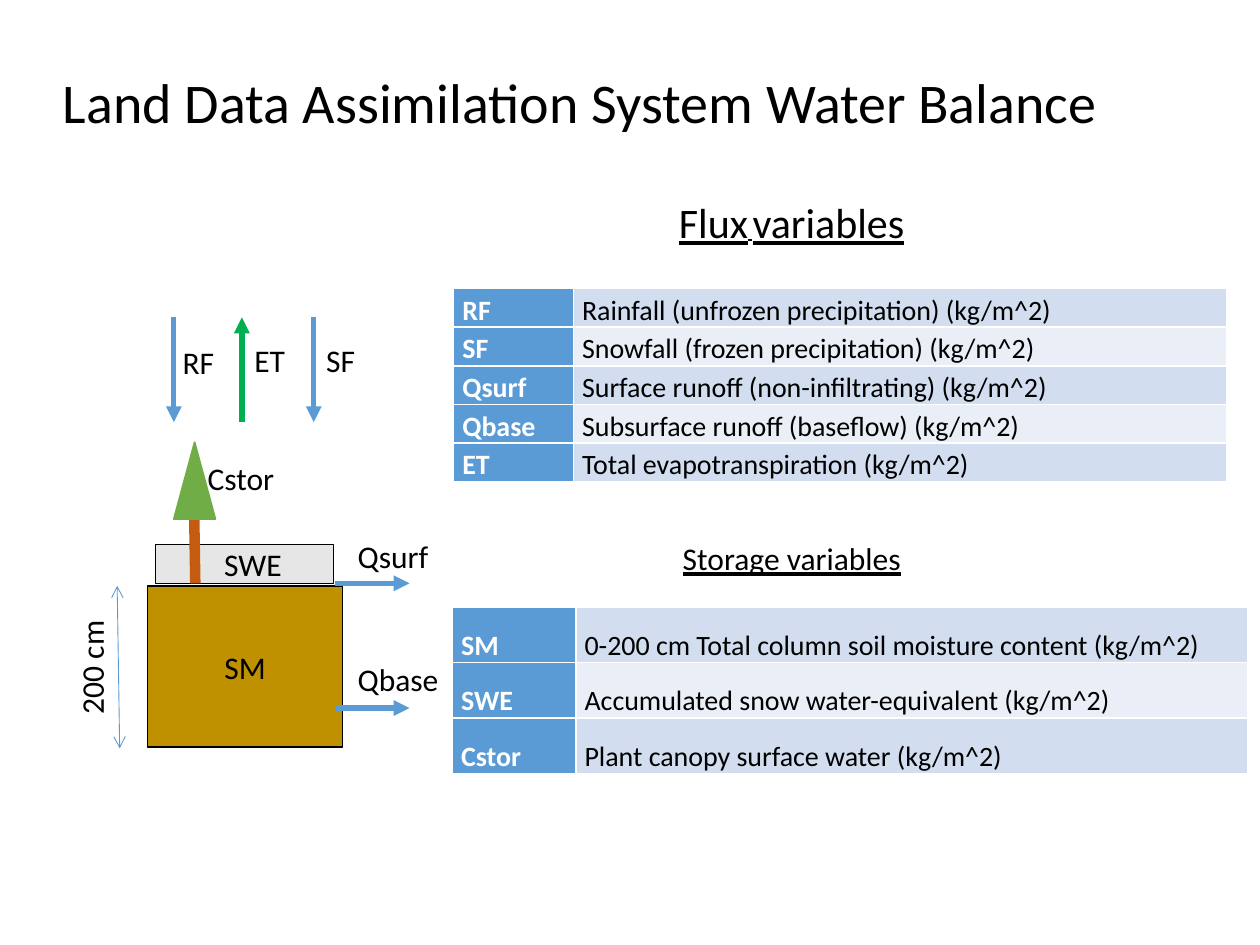
"""Build the Land Data Assimilation System water balance slide."""
from dataclasses import dataclass

from lxml import etree
from pptx import Presentation
from pptx import util as u
from pptx.dml.color import RGBColor
from pptx.enum import shapes, text
from pptx.oxml import ns


@dataclass(frozen=True)
class Theme:
    font: str = "Calibri"
    ink: str = "000000"
    white: str = "FFFFFF"
    blue: str = "5B9BD5"
    green: str = "00B050"
    soil: str = "BF9000"
    snow: str = "E7E6E6"
    trunk: str = "C55A11"
    leaf: str = "70AD47"
    bands: tuple = ("D2DEEF", "EAEFF7")
    title: int = 32
    heading: int = 24
    label: int = 18
    cell: int = 16
    gap: int = 11


class SlideBuilder:
    def __init__(self, slide, theme):
        self.slide, self.theme = slide, theme

    def style(self, run, size, color=None, bold=False, underline=False):
        run.font.name, run.font.size = self.theme.font, u.Pt(size)
        run.font.bold, run.font.underline = bold, underline
        run.font.color.rgb = RGBColor.from_string(color or self.theme.ink)

    def block(self, kind, box, fill, outline, weight, caption=""):
        block = self.slide.shapes.add_shape(kind, *map(u.Inches, box))
        block.shadow.inherit = False
        block.fill.solid()
        block.fill.fore_color.rgb = RGBColor.from_string(fill)
        block.line.color.rgb = RGBColor.from_string(outline)
        block.line.width = u.Pt(weight)
        if caption:
            frame = block.text_frame
            frame.text = caption
            frame.vertical_anchor = text.MSO_ANCHOR.MIDDLE
            frame.paragraphs[0].alignment = text.PP_ALIGN.CENTER
            self.style(frame.paragraphs[0].runs[0], self.theme.label)

    def label(self, parts, box, underline=False, rotation=0):
        holder = self.slide.shapes.add_textbox(*map(u.Inches, box))
        holder.rotation = rotation
        frame = holder.text_frame
        frame.word_wrap = False
        frame.auto_size = text.MSO_AUTO_SIZE.SHAPE_TO_FIT_TEXT
        for wording, size in parts:
            run = frame.paragraphs[0].add_run()
            run.text = wording
            self.style(run, size, underline=underline)

    def arrow(self, start, end, color, weight, **ends):
        points = map(u.Inches, (*start, *end))
        arrow = self.slide.shapes.add_connector(shapes.MSO_CONNECTOR.STRAIGHT, *points)
        arrow.line.color.rgb = RGBColor.from_string(color)
        arrow.line.width = u.Pt(weight)
        properties = arrow._element.spPr
        for end_name in ("head", "tail"):
            if end_name in ends:
                outline = properties.find(ns.qn("a:ln"))
                etree.SubElement(outline, ns.qn(f"a:{end_name}End"), type=ends[end_name])
        etree.SubElement(properties, ns.qn("a:effectLst"))

    def border(self, cell):
        properties = cell._tc.get_or_add_tcPr()
        for place, side in enumerate("LRTB"):
            edge = etree.Element(ns.qn(f"a:ln{side}"), w=str(u.Pt(1)))
            fill = etree.SubElement(edge, ns.qn("a:solidFill"))
            etree.SubElement(fill, ns.qn("a:srgbClr"), val=self.theme.white)
            properties.insert(place, edge)

    def cell(self, cell, wording, fill, color, bold):
        cell.text = wording
        cell.fill.solid()
        cell.fill.fore_color.rgb = RGBColor.from_string(fill)
        cell.vertical_anchor = text.MSO_ANCHOR.BOTTOM
        cell.margin_left = cell.margin_right = u.Inches(0.07)
        cell.margin_top = cell.margin_bottom = 0
        paragraph = cell.text_frame.paragraphs[0]
        paragraph.line_spacing = 1.15
        self.style(paragraph.runs[0], self.theme.cell, color, bold)
        self.border(cell)

    def table(self, left, top, widths, row_height, rows):
        size = (sum(widths), row_height * len(rows))
        table = self.slide.shapes.add_table(
            len(rows), 2, *map(u.Inches, (left, top, *size))).table
        table.first_row = table.horz_banding = False
        for column, width in zip(table.columns, widths):
            column.width = u.Inches(width)
        for index, (name, meaning) in enumerate(rows):
            table.rows[index].height = u.Inches(row_height)
            band = self.theme.bands[index % 2]
            self.cell(table.cell(index, 0), name, self.theme.blue, self.theme.white, True)
            self.cell(table.cell(index, 1), meaning, band, self.theme.ink, False)


def draw_diagram(page):
    theme, kinds = page.theme, shapes.MSO_SHAPE
    page.block(kinds.RECTANGLE, (1.17, 4.65, 1.55, 1.28), theme.soil, theme.ink, 0.75, "SM")
    page.block(kinds.RECTANGLE, (1.23, 4.32, 1.42, 0.31), theme.snow, theme.ink, 0.5)
    page.arrow((1.54, 3.99), (1.55, 4.63), theme.trunk, 6)
    page.block(kinds.ISOSCELES_TRIANGLE, (1.38, 3.51, 0.33, 0.61), theme.leaf, theme.leaf, 1)
    for x in (1.38, 2.49):
        page.arrow((x, 2.52), (x, 3.35), theme.blue, 3, tail="triangle")
    page.arrow((1.92, 2.52), (1.92, 3.35), theme.green, 3, head="triangle")
    for y in (4.63, 5.62):
        page.arrow((2.66, y), (3.25, y), theme.blue, 3, tail="triangle")
    page.arrow((0.93, 4.65), (0.95, 5.94), theme.blue, 0.5, head="arrow", tail="arrow")
    for name, left, top, width in (
        ("Cstor", 1.55, 3.59, 0.73),
        ("SWE", 1.68, 4.28, 0.66),
        ("RF", 1.35, 2.67, 0.45),
        ("ET", 1.92, 2.66, 0.45),
        ("SF", 2.49, 2.66, 0.43),
        ("Qsurf", 2.74, 4.21, 0.77),
        ("Qbase", 2.74, 5.19, 0.85),
    ):
        page.label([(name, theme.label)], (left, top, width, 0.4))
    page.label([("200 cm", theme.label)], (0.25, 5.09, 0.95, 0.4), rotation=270)


def main():
    deck = Presentation()
    deck.slide_width, deck.slide_height = u.Inches(10), u.Inches(7.5)
    theme = Theme()
    page = SlideBuilder(deck.slides.add_slide(deck.slide_layouts[6]), theme)

    draw_diagram(page)
    page.table(3.6, 2.29, (0.95, 5.19), 0.3, [
        ("RF", "Rainfall (unfrozen precipitation) (kg/m^2)"),
        ("SF", "Snowfall (frozen precipitation) (kg/m^2)"),
        ("Qsurf", "Surface runoff (non-infiltrating) (kg/m^2)"),
        ("Qbase", "Subsurface runoff (baseflow) (kg/m^2)"),
        ("ET", "Total evapotranspiration (kg/m^2)"),
    ])
    page.table(3.59, 4.82, (0.98, 5.33), 0.44, [
        ("SM", "0-200 cm Total column soil moisture content (kg/m^2)"),
        ("SWE", "Accumulated snow water-equivalent (kg/m^2)"),
        ("Cstor", "Plant canopy surface water (kg/m^2)"),
    ])
    flux_heading = [("Flux", theme.heading), (" ", theme.gap), ("variables", theme.heading)]
    page.label(flux_heading, (5.29, 1.51, 2.01, 0.5), underline=True)
    page.label([("Land Data Assimilation System Water Balance", theme.title)],
               (0.4, 0.49, 8.5, 0.64))
    page.label([("Storage variables", theme.label)], (5.32, 4.23, 1.95, 0.4), underline=True)
    deck.save("out.pptx")


if __name__ == "__main__":
    main()
